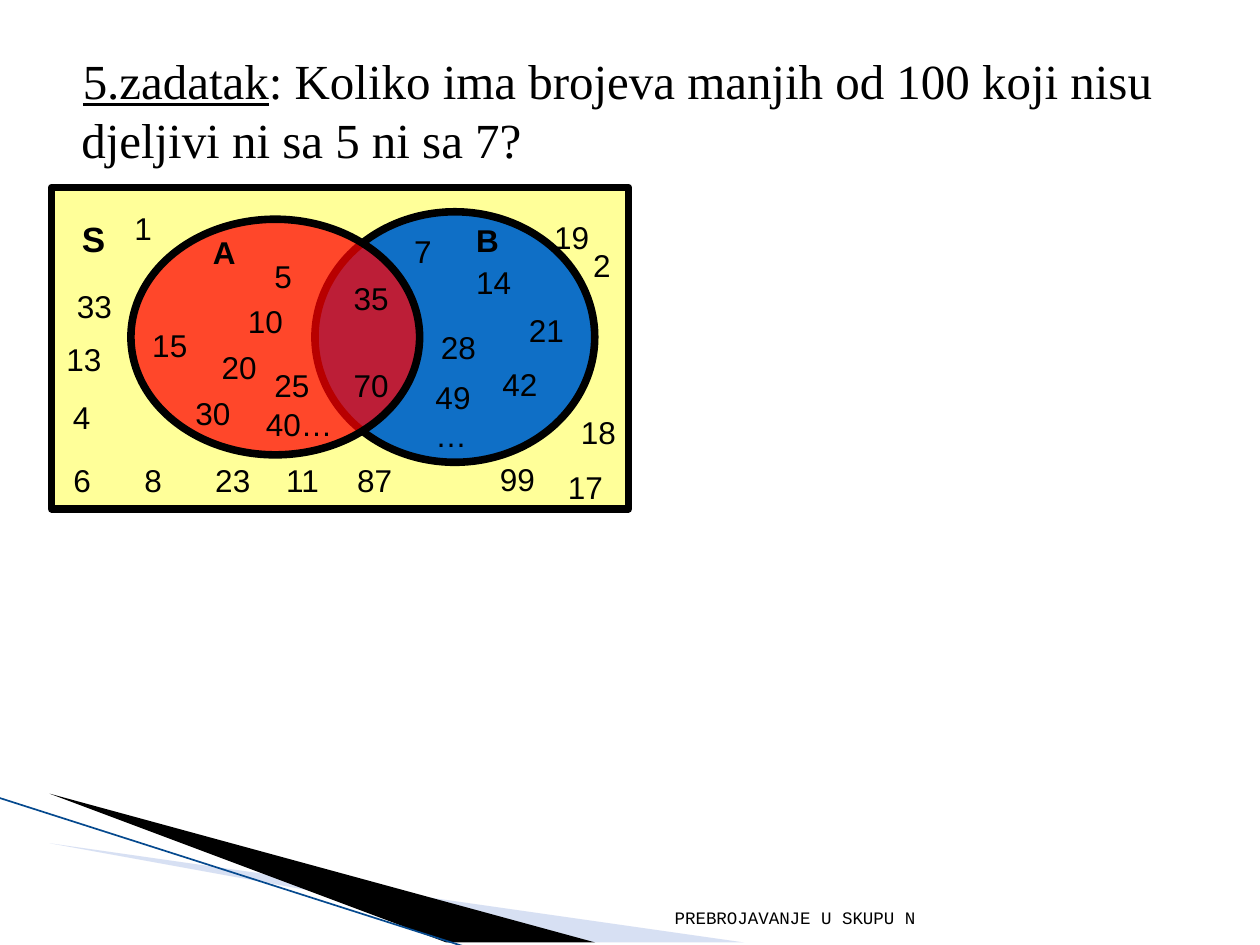
from lxml import etree
from pptx import Presentation
from pptx.dml.color import RGBColor
from pptx.enum.shapes import MSO_CONNECTOR, MSO_SHAPE
from pptx.enum.text import MSO_ANCHOR as ANCHOR, MSO_AUTO_SIZE as AUTO, PP_ALIGN as ALIGN
from pptx.oxml.ns import qn
from pptx.util import Cm, Pt

BLACK = "000000"

# Numbers as (text, left, top) in centimetres
ONLY_A = [("15", 2.82, 6.45), ("25", 5.28, 7.26)]
BOTH = [("35", 6.88, 5.51), ("70", 6.88, 7.26)]
ONLY_B = [("7", 8.1, 4.55), ("14", 9.35, 5.18), ("28", 8.64, 6.48),
          ("21", 10.41, 6.15), ("42", 9.88, 7.24)]
OUTSIDE = [("1", 2.46, 4.09), ("2", 11.71, 4.83), ("33", 1.3, 5.66),
           ("13", 1.09, 6.73), ("4", 1.22, 7.9), ("99", 9.83, 9.14),
           ("17", 11.2, 9.32), ("18", 11.46, 8.2)]
DIAGONAL = ["5", "10", "20", "30"]
BOTTOM_ROW = ["6", "8", "23", "11", "87"]


def color(value):
    return RGBColor.from_string(value)


def set_fill(s, value, opacity=100):
    s.fill.solid()
    s.fill.fore_color.rgb = color(value)
    if opacity < 100:
        clr = s.fill._xPr.find(qn("a:solidFill"))[0]
        etree.SubElement(clr, qn("a:alpha")).set("val", str(opacity * 1000))


def add_region(slide, kind, x, y, w, h, fill, opacity=100):
    s = slide.shapes.add_shape(kind, Cm(x), Cm(y), Cm(w), Cm(h))
    s.shadow.inherit = False
    set_fill(s, fill, opacity)
    s.line.color.rgb = color(BLACK)
    s.line.width = Pt(4.33)


def add_wedge(slide, points, fill, opacity=100):
    builder = slide.shapes.build_freeform(*points[0], scale=Cm(1))
    builder.add_line_segments(points[1:], close=True)
    s = builder.convert_to_shape()
    s.shadow.inherit = False
    set_fill(s, fill, opacity)
    s.line.fill.background()


def format_run(r, size, font, bold=None):
    r.font.size = Pt(size)
    r.font.name = font
    r.font.bold = bold
    r.font.color.rgb = color(BLACK)


def add_text(slide, text, x, y, w, h, size, font, bold=None):
    s = slide.shapes.add_textbox(Cm(x), Cm(y), Cm(w), Cm(h))
    tf = s.text_frame
    tf.word_wrap = True
    tf.text = text
    format_run(tf.paragraphs[0].runs[0], size, font, bold)
    return tf


def add_label(slide, text, x, y, w=1.24, h=0.91, size=18, bold=None):
    tf = add_text(slide, text, x, y, w, h, size, "Arial", bold)
    tf.auto_size = AUTO.SHAPE_TO_FIT_TEXT


def add_corner(slide):
    add_wedge(slide, [(1.4, 16.51), (15.11, 19.08), (11.58, 19.08)], "9DB2E1", 40)
    add_wedge(slide, [(1.35, 16.48), (11.61, 19.08), (9.45, 19.1)], BLACK)
    s = slide.shapes.add_connector(MSO_CONNECTOR.STRAIGHT, Cm(-0.03), Cm(16.08),
                                   Cm(9.42), Cm(19.1))
    s.line.color.rgb = color("05498E")
    s.line.width = Pt(0.95)
    etree.SubElement(s._element.spPr, qn("a:effectLst"))


def add_title(slide):
    tf = add_text(slide, "5.zadatak", 1.19, 0.89, 22.86, 15.6, 28, "Times New Roman")
    p = tf.paragraphs[0]
    p.runs[0].font.underline = True
    r = p.add_run()
    r.text = ": Koliko ima brojeva manjih od 100 koji nisu djeljivi ni sa 5 ni sa 7?"
    format_run(r, 28, "Times New Roman")
    pPr = p._p.get_or_add_pPr()
    pPr.set("marL", str(Cm(0.2)))
    pPr.set("indent", str(Cm(0.03)))


def add_venn(slide):
    # Universe and the two sets
    add_region(slide, MSO_SHAPE.RECTANGLE, 1.04, 3.78, 11.63, 6.48, "FFFF99")
    add_region(slide, MSO_SHAPE.OVAL, 6.35, 4.27, 5.64, 5.05, "0F6FC6")
    add_region(slide, MSO_SHAPE.OVAL, 2.64, 4.42, 5.82, 4.75, "FF0000", 72)

    # Set names
    add_label(slide, "S", 1.4, 4.27, h=1.14, size=20, bold=True)
    add_label(slide, "A", 4.04, 4.57, h=1.14, bold=True)
    add_label(slide, "B", 9.35, 4.34, h=1.14, bold=True)

    # Elements
    for text, x, y in ONLY_A + BOTH + ONLY_B + OUTSIDE:
        add_label(slide, text, x, y)
    for i, text in enumerate(DIAGONAL):
        add_label(slide, text, 5.28 - 0.53 * i, 5.05 + 0.92 * i)
    for i, text in enumerate(BOTTOM_ROW):
        add_label(slide, text, 1.23 + 1.43 * i, 9.17)
    add_label(slide, "40…", 5.11, 8.05, w=2.11)
    add_label(slide, "49…", 8.53, 7.49, w=1.78)
    add_label(slide, "19", 10.92, 4.27, w=1.75)


def add_footer(slide):
    tf = add_text(slide, "PREBROJAVANJE U SKUPU N", 12.17, 17.81, 6.53, 1.02,
                  10, "Courier New")
    tf.vertical_anchor = ANCHOR.BOTTOM
    tf.paragraphs[0].alignment = ALIGN.RIGHT


def main():
    prs = Presentation()
    prs.slide_width, prs.slide_height = Cm(25.4), Cm(19.05)
    slide = prs.slides.add_slide(prs.slide_layouts[6])
    add_corner(slide)
    add_title(slide)
    add_footer(slide)
    add_venn(slide)
    prs.save("out.pptx")


if __name__ == "__main__":
    main()
